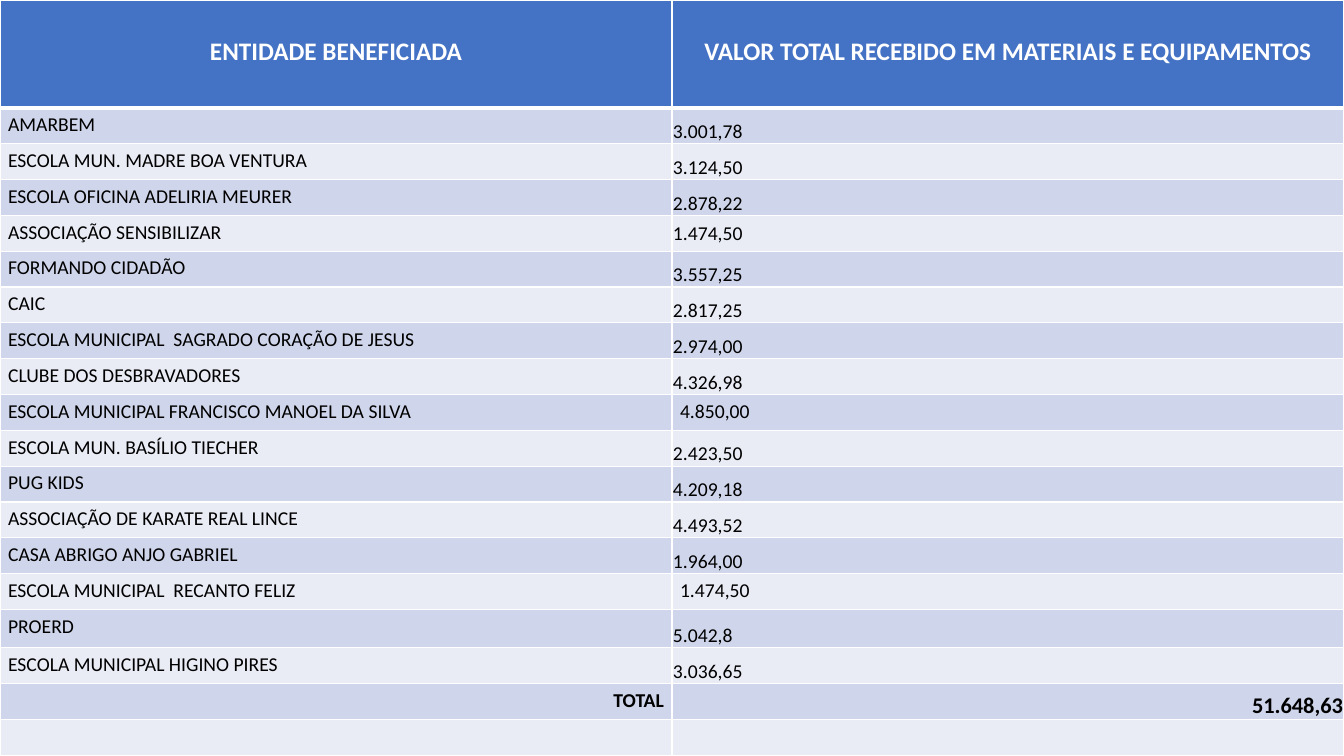
from dataclasses import dataclass

import pptx
import pptx.dml.color
import pptx.enum.text
import pptx.oxml
import pptx.oxml.ns
import pptx.util

ALIGN = pptx.enum.text.PP_ALIGN
ANCHOR = pptx.enum.text.MSO_ANCHOR


@dataclass(frozen=True)
class Theme:
    font: str = "Calibri"
    head: str = "4472C4"
    bands: tuple = ("CFD5EA", "E9EBF5")
    light: str = "FFFFFF"
    dark: str = "000000"
    large: int = 18
    medium: int = 16
    small: int = 14
    thin: int = 1
    thick: int = 3
    # Cell margins in inches: left, top, right, bottom
    roomy: tuple = (0.08, 0.05, 0.08, 0.05)
    tight: tuple = (0.01, 0.01, 0.01, 0)
    title: tuple = (0.08, 0.36, 0.08, 0.05)


class Deck:
    def __init__(self, theme, width, height):
        self.theme = theme
        self.prs = pptx.Presentation()
        self.prs.slide_width = pptx.util.Inches(width)
        self.prs.slide_height = pptx.util.Inches(height)
        self.slide = self.prs.slides.add_slide(self.prs.slide_layouts[6])

    def table(self, cols, rows):
        """Fill the slide with a table; cols and rows are shares of its size."""
        wide, high = self.prs.slide_width, self.prs.slide_height
        table = self.slide.shapes.add_table(
            len(rows), len(cols), 0, 0, wide, high).table
        for col, share in zip(table.columns, cols):
            col.width = int(wide * share)
        for row, share in zip(table.rows, rows):
            row.height = int(high * share)
        return table

    def border(self, cell, top, bottom):
        props = cell._tc.get_or_add_tcPr()
        widths = {"L": self.theme.thin, "R": self.theme.thin,
                  "T": top, "B": bottom}
        for side, width in widths.items():
            props.append(pptx.oxml.parse_xml(
                f'<a:ln{side} {pptx.oxml.ns.nsdecls("a")} '
                f'w="{pptx.util.Pt(width)}"><a:solidFill>'
                f'<a:srgbClr val="{self.theme.light}"/>'
                f'</a:solidFill></a:ln{side}>'))

    def cell(self, cell, text, fill, inset, size=None, color=None, bold=False,
             align=ALIGN.LEFT, anchor=ANCHOR.TOP, top=None, bottom=None):
        theme = self.theme
        self.border(cell, top or theme.thin, bottom or theme.thin)
        cell.fill.solid()
        cell.fill.fore_color.rgb = pptx.dml.color.RGBColor.from_string(fill)
        (cell.margin_left, cell.margin_top, cell.margin_right,
         cell.margin_bottom) = map(pptx.util.Inches, inset)
        cell.vertical_anchor = anchor
        if not text:
            return
        cell.text = text
        para = cell.text_frame.paragraphs[0]
        para.alignment = align
        font = para.font
        font.name, font.bold = theme.font, bold
        font.size = pptx.util.Pt(size or theme.small)
        font.color.rgb = pptx.dml.color.RGBColor.from_string(
            color or theme.dark)


HEADS = ("ENTIDADE BENEFICIADA",
         "VALOR TOTAL RECEBIDO EM MATERIAIS E EQUIPAMENTOS")
GRANTS = (
    ("AMARBEM", "3.001,78"),
    ("ESCOLA MUN. MADRE BOA VENTURA", "3.124,50"),
    ("ESCOLA OFICINA ADELIRIA MEURER", "2.878,22"),
    ("ASSOCIAÇÃO SENSIBILIZAR", "1.474,50"),
    ("FORMANDO CIDADÃO", "3.557,25"),
    ("CAIC", "2.817,25"),
    ("ESCOLA MUNICIPAL  SAGRADO CORAÇÃO DE JESUS", "2.974,00"),
    ("CLUBE DOS DESBRAVADORES", "4.326,98"),
    ("ESCOLA MUNICIPAL FRANCISCO MANOEL DA SILVA", "4.850,00"),
    ("ESCOLA MUN. BASÍLIO TIECHER", "2.423,50"),
    ("PUG KIDS", "4.209,18"),
    ("ASSOCIAÇÃO DE KARATE REAL LINCE", "4.493,52"),
    ("CASA ABRIGO ANJO GABRIEL", "1.964,00"),
    ("ESCOLA MUNICIPAL  RECANTO FELIZ", "1.474,50"),
    ("PROERD", "5.042,8"),
    ("ESCOLA MUNICIPAL HIGINO PIRES", "3.036,65"),
    ("TOTAL", "51.648,63"),
    ("", ""),
)
CENTERED = {"ASSOCIAÇÃO SENSIBILIZAR"}
PADDED = {"ESCOLA MUNICIPAL FRANCISCO MANOEL DA SILVA",
          "ESCOLA MUNICIPAL  RECANTO FELIZ"}
TALL = {"PROERD"}


def shares():
    """Row heights as shares: header, one taller row, the rest equal."""
    head, tall = 1.07 / 7.5, 0.38 / 7.5
    rest = (1 - head - tall * len(TALL)) / (len(GRANTS) - len(TALL))
    return [head] + [tall if name in TALL else rest for name, _ in GRANTS]


def main():
    theme = Theme()
    deck = Deck(theme, 13.33, 7.5)
    table = deck.table([1 / 2] * 2, shares())
    for col, text in enumerate(HEADS):
        deck.cell(table.cell(0, col), text, theme.head, theme.title,
                  size=theme.large, color=theme.light, bold=True,
                  align=ALIGN.CENTER, bottom=theme.thick)

    for row, (name, value) in enumerate(GRANTS, 1):
        total = name == "TOTAL"
        style = {
            "fill": theme.bands[(row - 1) % 2],
            "bold": total,
            "align": ALIGN.RIGHT if total else ALIGN.LEFT,
            "top": theme.thick if row == 1 else theme.thin,
        }
        padded = name in PADDED
        anchor = (ANCHOR.TOP if padded else
                  ANCHOR.MIDDLE if name in CENTERED else ANCHOR.BOTTOM)
        deck.cell(table.cell(row, 0), name,
                  inset=theme.roomy if name else theme.tight, **style)
        deck.cell(table.cell(row, 1), value,
                  inset=theme.roomy if padded else theme.tight,
                  size=theme.medium if total else theme.small,
                  anchor=anchor, **style)
    deck.prs.save("out.pptx")


if __name__ == "__main__":
    main()
